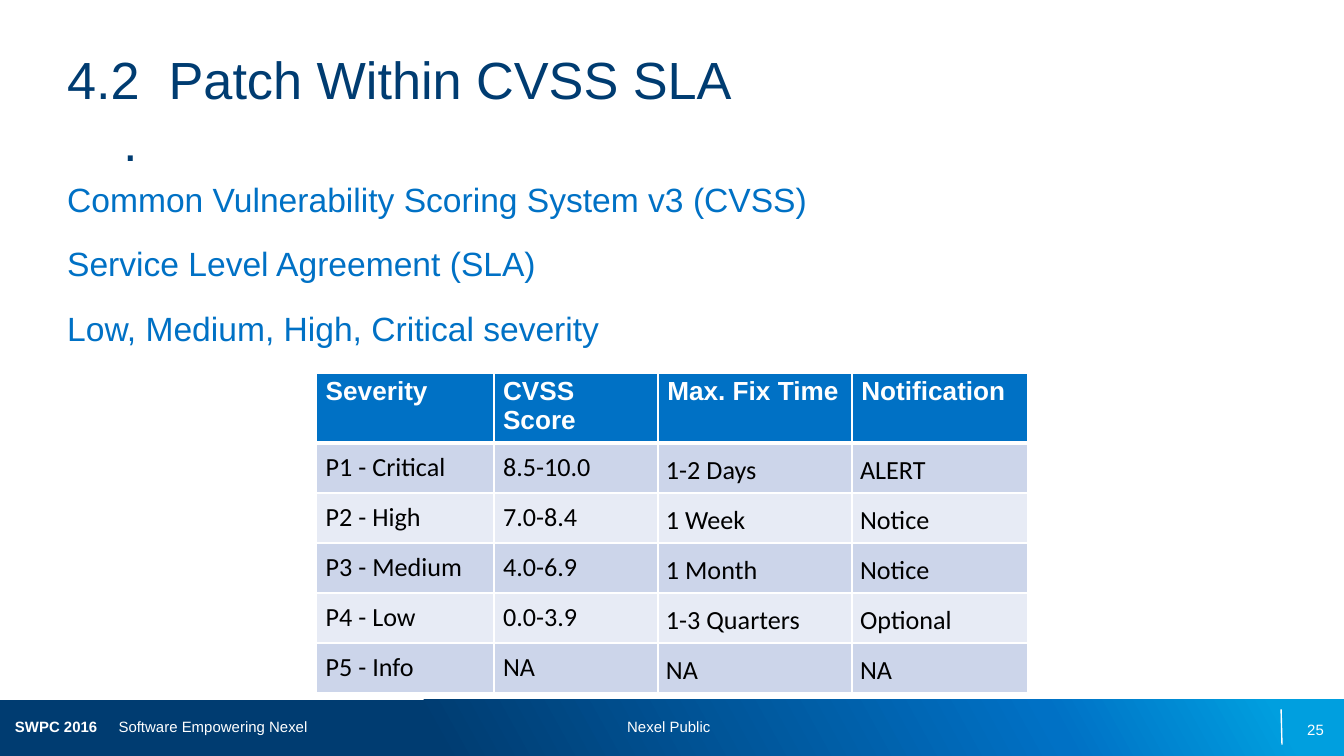
from copy import deepcopy

from pptx import Presentation
from pptx.dml.color import RGBColor
from pptx.enum.shapes import MSO_CONNECTOR as Connector, MSO_SHAPE as Shape
from pptx.enum.text import MSO_ANCHOR as Anchor, PP_ALIGN as Align
from pptx.oxml.ns import qn
from pptx.util import Pt
from lxml.etree import SubElement

NAVY = RGBColor(0x00, 0x3C, 0x71)
BLUE = RGBColor(0x00, 0x71, 0xC5)
SKY = RGBColor(0x00, 0x9F, 0xDF)
WHITE = RGBColor(0xFF, 0xFF, 0xFF)
BLACK = RGBColor(0x00, 0x00, 0x00)
BAND_DARK = RGBColor(0xCC, 0xD5, 0xEA)
BAND_LIGHT = RGBColor(0xE7, 0xEB, 0xF5)


def apply(target, values):
    for name, value in values.items():
        setattr(target, name, value)


class SlideWriter:
    heading = "Arial"
    table_body = "Calibri"
    margins = ("margin_left", "margin_top", "margin_right", "margin_bottom")

    def __init__(self, slide):
        self.slide = slide

    def run(self, paragraph, text, size, color, font=heading, bold=False):
        run = paragraph.add_run()
        run.text = text
        apply(run.font, {"name": font, "size": Pt(size), "bold": bold})
        run.font.color.rgb = color

    def text(self, box, lines, size, color, anchor=Anchor.TOP, align=Align.LEFT, gap=0):
        frame = self.slide.shapes.add_textbox(*map(Pt, box)).text_frame
        apply(frame, dict.fromkeys(self.margins, 0))
        apply(frame, {"word_wrap": True, "vertical_anchor": anchor})
        for index, line in enumerate(lines):
            paragraph = frame.add_paragraph() if index else frame.paragraphs[0]
            paragraph.alignment = align
            if index and gap:
                paragraph.space_before = Pt(gap)
            if line:
                self.run(paragraph, line, size, color)
        return frame.paragraphs

    def gradient_bar(self, box, stops, angle):
        bar = self.slide.shapes.add_shape(Shape.RECTANGLE, *map(Pt, box))
        bar.shadow.inherit = False
        bar.line.fill.background()
        bar.fill.gradient()
        bar.fill.gradient_angle = angle
        stop_list = bar.fill._fill._gradFill.gsLst
        stop_list.append(deepcopy(stop_list[0]))
        for stop, (position, color) in zip(bar.fill.gradient_stops, stops):
            stop.position = position
            stop.color.rgb = color

    def line(self, ends, color, width):
        line = self.slide.shapes.add_connector(Connector.STRAIGHT, *map(Pt, ends))
        apply(line.line, {"width": Pt(width)})
        line.line.fill.solid()
        line.line.fill.fore_color.rgb = color
        SubElement(line._element.spPr, qn("a:effectLst"))

    def borders(self, cell, widths):
        properties = cell._tc.get_or_add_tcPr()
        for side, width in widths.items():
            edge = SubElement(properties, qn(f"a:ln{side}"), w=str(Pt(width)))
            fill = SubElement(edge, qn("a:solidFill"))
            SubElement(fill, qn("a:srgbClr"), val=str(WHITE))

    def cell(self, cell, text, row, column):
        header = row == 0
        timing = column >= 2 and not header
        if header:
            insets, fill = (5, 2, 5, 2), BLUE
        else:
            insets = (4.3, 3.6, 4.3, 3.6) if timing else (5, 3.6, 0, 3.6)
            fill = BAND_DARK if row % 2 else BAND_LIGHT
        apply(cell, dict(zip(self.margins, map(Pt, insets))))
        cell.vertical_anchor = Anchor.TOP if header else Anchor.MIDDLE
        self.borders(cell, {"L": 1, "R": 1, "T": 3 if row == 1 else 1, "B": 3 if header else 1})
        cell.fill.solid()
        cell.fill.fore_color.rgb = fill
        paragraph = cell.text_frame.paragraphs[0]
        if timing:
            paragraph.line_spacing = 1.15
        self.run(paragraph, text, 14, WHITE if header else BLACK,
                 self.heading if header else self.table_body, header)

    def table(self, left, top, widths, heights, rows):
        table = self.slide.shapes.add_table(
            len(rows), len(widths), Pt(left), Pt(top), Pt(sum(widths)), Pt(sum(heights))).table
        for column, width in zip(table.columns, widths):
            column.width = Pt(width)
        for index, (row, height, values) in enumerate(zip(table.rows, heights, rows)):
            row.height = Pt(height)
            for column, value in enumerate(values):
                self.cell(row.cells[column], value, index, column)


def main():
    deck = Presentation()
    apply(deck, {"slide_width": Pt(720), "slide_height": Pt(405)})
    writer = SlideWriter(deck.slides.add_slide(deck.slide_layouts[6]))

    writer.gradient_bar((0, 375, 720, 30), [(0.32, NAVY), (0.78, BLUE), (0.95, SKY)], 29)
    writer.line((686.3, 380, 686.8, 399), WHITE, 0.75)

    event, = writer.text((8, 378.7, 168, 21.6), [""], 8, WHITE, Anchor.MIDDLE)
    tabs = SubElement(event._p.get_or_add_pPr(), qn("a:tabLst"))
    SubElement(tabs, qn("a:tab"), pos=str(Pt(55.5)), algn="l")
    writer.run(event, "SWPC 2016", 8, WHITE, bold=True)
    writer.run(event, "\tSoftware Empowering Nexel", 8, WHITE)
    writer.text((274.3, 378.7, 168, 21.6), ["Nexel Public"], 8, WHITE, Anchor.MIDDLE, Align.CENTER)
    writer.text((541.2, 380.2, 168, 21.6), ["25"], 8, WHITE, Anchor.MIDDLE, Align.RIGHT)

    title, period = writer.text(
        (36, 24.5, 648, 68.4), ["4.2  Patch Within CVSS SLA", "."], 28, NAVY, Anchor.MIDDLE)
    period._p.get_or_add_pPr().set("marL", str(Pt(30)))
    writer.text((36, 96, 648, 269),
                ["Common Vulnerability Scoring System v3 (CVSS)",
                 "Service Level Agreement (SLA)",
                 "Low, Medium, High, Critical severity"], 18, BLUE, gap=12.8)

    severities = [
        ("Severity", "CVSS Score", "Max. Fix Time", "Notification"),
        ("P1 - Critical", "8.5-10.0", "1-2 Days", "ALERT"),
        ("P2 - High", "7.0-8.4", "1 Week", "Notice"),
        ("P3 - Medium", "4.0-6.9", "1 Month", "Notice"),
        ("P4 - Low", "0.0-3.9", "1-3 Quarters", "Optional"),
        ("P5 - Info", "NA", "NA", "NA"),
    ]
    writer.table(169.5, 199.7, [95, 88, 104, 94], [36.2] + [26.8] * 5, severities)
    deck.save("out.pptx")


if __name__ == "__main__":
    main()
